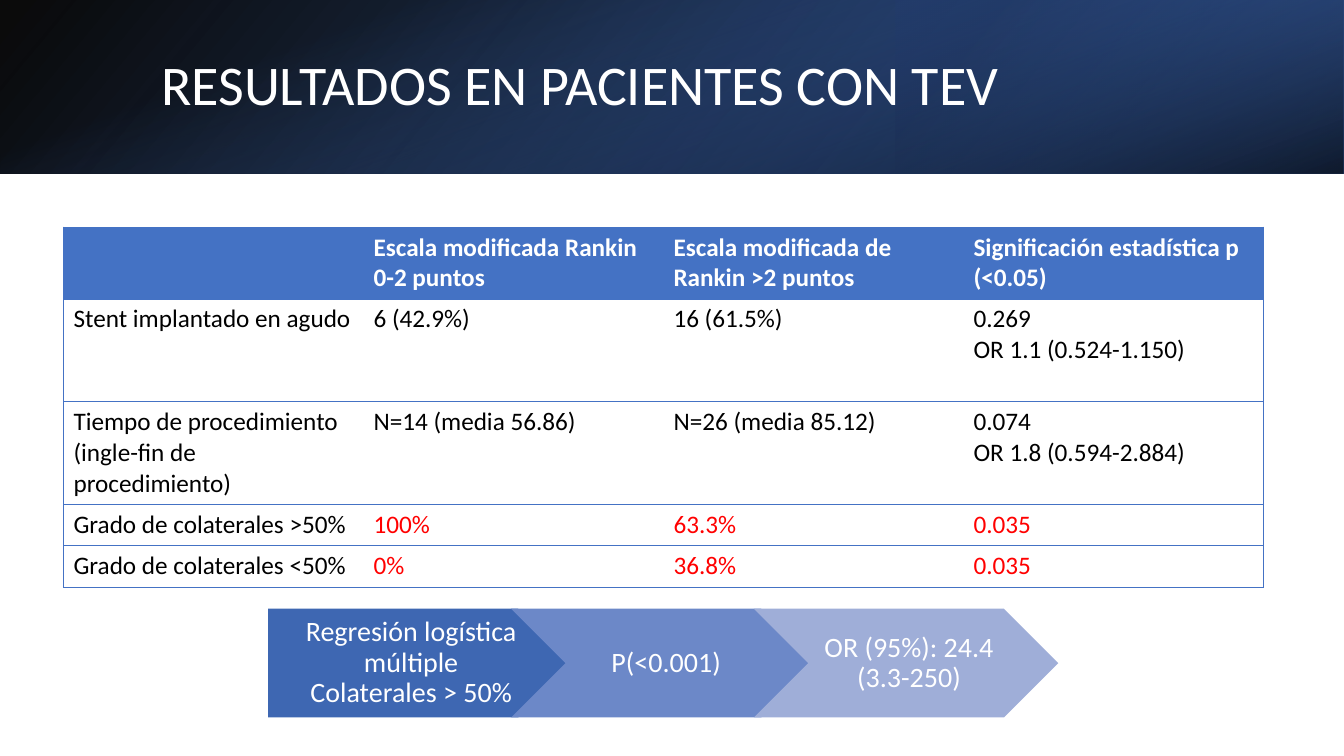
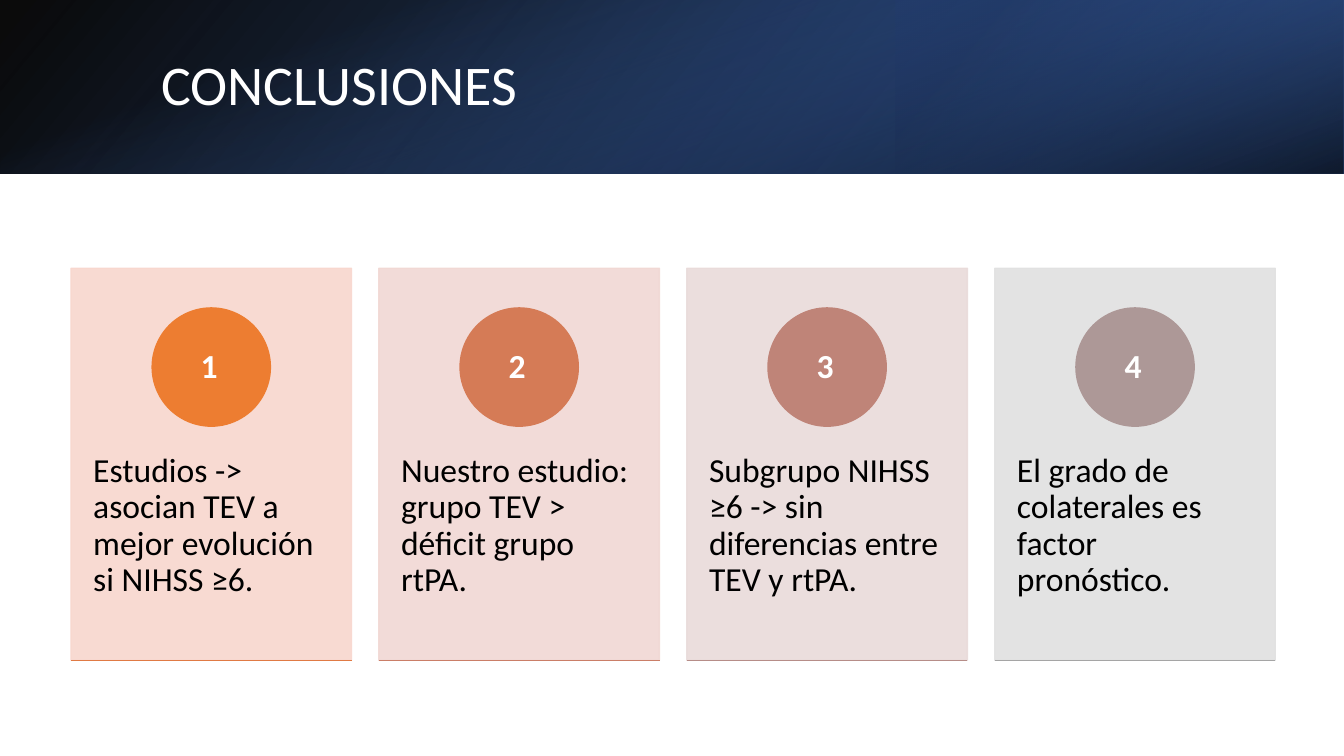
from lxml.etree import SubElement
from pptx import Presentation
from pptx.dml.color import RGBColor
from pptx.enum.shapes import MSO_CONNECTOR, MSO_SHAPE
from pptx.enum.text import MSO_ANCHOR, MSO_AUTO_SIZE, PP_ALIGN
from pptx.oxml import parse_xml
from pptx.oxml.ns import nsdecls, qn
from pptx.util import Cm, Pt

WIDTH, HEIGHT, BAND = 33.87, 19.05, 4.37
WHITE, BLACK, BLUE, RED = "FFFFFF", "000000", "4472C4", "FF0000"


def colour(value):
    """Turn a hex string into a colour."""
    return RGBColor.from_string(value)


class Deck:
    """Hold the shared style and the current slide."""

    font = "Calibri"

    def __init__(self):
        """Set the slide size and place the title on the layout."""
        self.presentation = Presentation()
        self.presentation.slide_width = Cm(WIDTH)
        self.presentation.slide_height = Cm(HEIGHT)
        self.layout = self.presentation.slide_layouts[5]
        title = self.layout.placeholders[0]
        title.left, title.top, title.width, title.height = map(Cm, (3.81, 0.97, 27.89, 2.44))
        self.slide = None

    def start_slide(self, title):
        """Add a slide with its title, and the shared bands the first time."""
        first = self.slide is None
        self.slide = self.presentation.slides.add_slide(self.layout)
        if first:
            self.bands()
        frame = self.slide.shapes.title.text_frame
        frame.auto_size = MSO_AUTO_SIZE.NONE
        frame.vertical_anchor = MSO_ANCHOR.MIDDLE
        self.add_text(frame, title, 40, WHITE, spacing=0.9)

    def bands(self):
        """Build the three gradient layers and keep them on the layout."""
        layers = [
            ((0, 0, WIDTH, BAND), 0, True, 140, [(0, BLACK, 96), (100, "2F5597", 100)]),
            ((WIDTH * 2 / 3, 0, WIDTH / 3, BAND), 180, True, 320,
             [(19, "203864", 68), (100, BLUE, 79)]),
            (((WIDTH - BAND) / 2, (BAND - WIDTH) / 2, BAND, WIDTH), 90, False, 340,
             [(23, BLUE, 0), (99, BLACK, 74)]),
        ]
        for index, (box, rotation, flipped, angle, stops) in enumerate(layers):
            shape = self.shape(MSO_SHAPE.RECTANGLE, box)
            shape.rotation = rotation
            properties = shape.element.spPr
            if flipped:
                properties.find(qn("a:xfrm")).set("flipH", "1")
            marks = "".join(
                f'<a:gs pos="{place * 1000}"><a:srgbClr val="{value}">'
                f'<a:alpha val="{opacity * 1000}"/></a:srgbClr></a:gs>'
                for place, value, opacity in stops)
            gradient = parse_xml(
                f'<a:gradFill {nsdecls("a")} rotWithShape="1"><a:gsLst>{marks}</a:gsLst>'
                f'<a:lin ang="{angle * 60000}" scaled="0"/></a:gradFill>')
            properties.replace(properties.find(qn("a:noFill")), gradient)
            shape.element.nvSpPr.cNvPr.set("id", str(20 + index))
            self.layout.shapes.element.insert(2 + index, shape.element)

    def add_text(self, frame, text, size, value, bold=False, align=PP_ALIGN.LEFT, spacing=1.0):
        """Fill one paragraph run by run, with a break at each new line."""
        paragraph = frame.paragraphs[0]
        paragraph.alignment = align
        paragraph.line_spacing = spacing
        for index, line in enumerate(text.split("\n")):
            if index:
                paragraph.add_line_break()
            run = paragraph.add_run()
            run.text = line
            run.font.name = self.font
            run.font.size = Pt(size)
            run.font.bold = bold
            run.font.color.rgb = colour(value)

    def shape(self, kind, box, fill=None, line=None, opacity=100):
        """Add a preset shape without a shadow."""
        shape = self.slide.shapes.add_shape(kind, *map(Cm, box))
        shape.shadow.inherit = False
        for target, value in ((shape.fill, fill), (shape.line.fill, line)):
            if value:
                target.solid()
                target.fore_color.rgb = colour(value)
            else:
                target.background()
        if line:
            shape.line.width = Pt(1)
        if opacity < 100:
            for item in shape.element.spPr.iter(qn("a:srgbClr")):
                SubElement(item, qn("a:alpha")).set("val", str(opacity * 1000))
        return shape

    def label(self, shape, text, size, value, insets, anchor=MSO_ANCHOR.MIDDLE, **style):
        """Put text inside a shape."""
        frame = shape.text_frame
        frame.word_wrap = True
        frame.vertical_anchor = anchor
        (frame.margin_left, frame.margin_top,
         frame.margin_right, frame.margin_bottom) = map(Cm, insets)
        self.add_text(frame, text, size, value, **style)

    def line(self, left, top, width, value):
        """Add a horizontal line."""
        connector = self.slide.shapes.add_connector(
            MSO_CONNECTOR.STRAIGHT, Cm(left), Cm(top), Cm(left + width), Cm(top))
        connector.line.color.rgb = colour(value)
        connector.line.width = Pt(1)
        SubElement(connector.element.spPr, qn("a:effectLst"))

    def borders(self, cell, visible):
        """Draw the visible sides of a cell and clear the others."""
        properties = cell._tc.get_or_add_tcPr()
        for side in "LRTB":
            border = SubElement(properties, qn(f"a:ln{side}"), w=str(Pt(0.5)))
            if side in visible:
                fill = SubElement(border, qn("a:solidFill"))
                SubElement(fill, qn("a:srgbClr"), val=BLUE)
            else:
                SubElement(border, qn("a:noFill"))

    def table(self, box, heights, rows, red_rows):
        """Add a table with a blue header and ruled rows."""
        last = len(rows[0]) - 1
        table = self.slide.shapes.add_table(len(rows), last + 1, *map(Cm, box)).table
        table.horz_banding = False
        for column in table.columns:
            column.width = Cm(box[2] / (last + 1))
        for row, (height, texts) in enumerate(zip(heights, rows)):
            table.rows[row].height = Cm(height)
            for column, text in enumerate(texts):
                cell = table.cell(row, column)
                self.borders(cell, "TB" + "L" * (column == 0) + "R" * (column == last))
                if row == 0:
                    cell.fill.solid()
                    cell.fill.fore_color.rgb = colour(BLUE)
                    value = WHITE
                else:
                    cell.fill.background()
                    value = RED if row in red_rows and column else BLACK
                if text:
                    self.add_text(cell.text_frame, text, 18, value, bold=row == 0)

    def process(self, left, top, steps):
        """Add overlapping arrows from left to right."""
        for index, (text, fill) in enumerate(steps):
            kind = MSO_SHAPE.CHEVRON if index else MSO_SHAPE.PENTAGON
            shape = self.shape(kind, (left + 6.12 * index, top, 7.67, 2.74), fill)
            insets = (0.23 if index else 0.3, 0.15, 0.08, 0.15)
            self.label(shape, text, 20, WHITE, insets, align=PP_ALIGN.CENTER, spacing=0.9)

    def card(self, index, text, fill, accent, rule):
        """Add a numbered card with a rule below."""
        left, top, width, height, circle = 1.79 + 7.76 * index, 6.76, 7.07, 9.88, 2.98
        card = self.shape(MSO_SHAPE.RECTANGLE, (left, top, width, height), fill, fill, 90)
        self.label(card, text, 24, BLACK, (0.56, 4.67, 0.56, 0.5), MSO_ANCHOR.TOP, spacing=0.9)
        disc = self.shape(MSO_SHAPE.OVAL, (left + (width - circle) / 2, top + 1, circle, circle),
                          accent, accent)
        self.label(disc, str(index + 1), 24, WHITE, (0, 0, 0.1, 0.1),
                   bold=True, align=PP_ALIGN.CENTER)
        self.line(left, top + height, width, rule)


def main():
    """Build the two slides and save them."""
    deck = Deck()

    deck.start_slide("RESULTADOS EN PACIENTES CON TEV")
    deck.table((1.6, 5.72, 30.24, 9.07), (1.81, 2.59, 2.59, 1.04, 1.04), [
        ("", "Escala modificada Rankin 0-2 puntos", "Escala modificada de Rankin >2 puntos",
         "Significación estadística p (<0.05)"),
        ("Stent implantado en agudo", "6 (42.9%)", "16 (61.5%)", "0.269\nOR 1.1 (0.524-1.150)"),
        ("Tiempo de procedimiento (ingle-fin de procedimiento)", "N=14 (media 56.86)",
         "N=26 (media 85.12)", "0.074\nOR 1.8 (0.594-2.884)"),
        ("Grado de colaterales >50%", "100%", "63.3%", "0.035"),
        ("Grado de colaterales <50%", "0%", "36.8%", "0.035"),
    ], red_rows=(3, 4))
    deck.process(6.76, 15.34, [
        ("Regresión logística múltiple\nColaterales > 50%", "3E67B2"),
        ("P(<0.001)", "6C88C8"),
        ("OR (95%): 24.4 (3.3-250)", "9FAED8"),
    ])

    deck.start_slide("CONCLUSIONES")
    conclusions = [
        ("Estudios -> asocian TEV a mejor evolución si NIHSS ≥6.", "F8D7CE", "ED7D31", "E07A44"),
        ("Nuestro estudio: grupo TEV > déficit grupo rtPA.", "F1D8D4", "D57B56", "CA7E67"),
        ("Subgrupo NIHSS ≥6 -> sin diferencias entre TEV y rtPA.", "E9DBDA", "BF8478", "B68D88"),
        ("El grado de colaterales es factor pronóstico.", "E1E1E1", "AD9897", "A5A5A5"),
    ]
    for index, conclusion in enumerate(conclusions):
        deck.card(index, *conclusion)

    deck.presentation.save("out.pptx")


if __name__ == "__main__":
    main()
